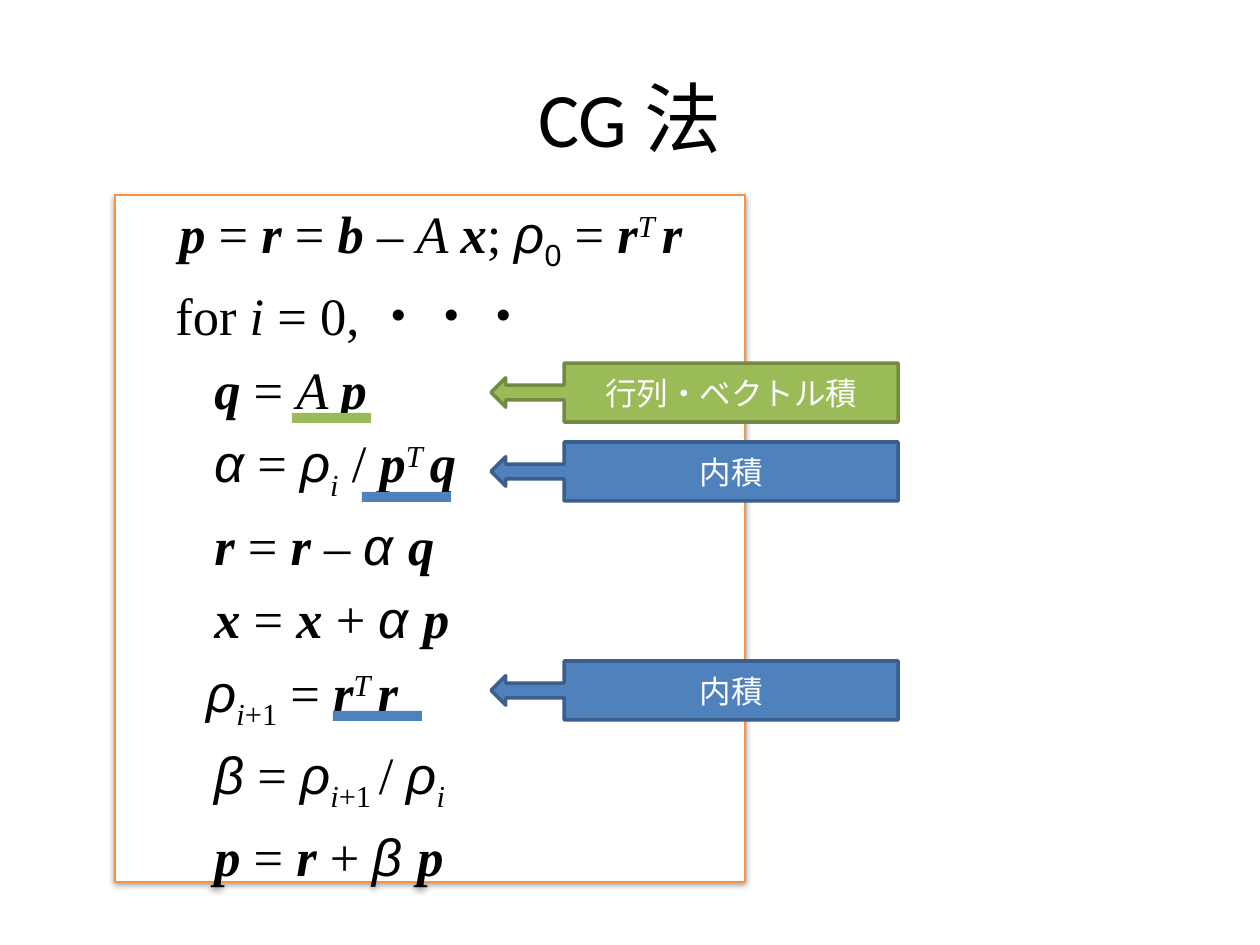
from lxml.etree import SubElement
from pptx import Presentation
from pptx.dml.color import RGBColor
from pptx.enum.shapes import MSO_SHAPE
from pptx.enum.text import MSO_ANCHOR, MSO_AUTO_SIZE, PP_ALIGN
from pptx.oxml.ns import qn
from pptx.util import Pt

PX = 914400 / 126
COLORS = {
    "text": "000000", "paper": "FFFFFF", "frame": "F69240",
    "green": "9BBB59", "green_edge": "738A42",
    "blue": "4F81BD", "blue_edge": "3A5F8C",
}

# style: font, bold, italic, baseline in percent
STYLES = {
    "plain": ("Times New Roman", False, False, 0),
    "vector": ("Times New Roman", True, True, 0),
    "matrix": ("Times New Roman", False, True, 0),
    "greek": ("Arial", False, True, 0),
    "zero": ("Arial", False, False, -25),
    "index": ("Times New Roman", False, True, -25),
    "offset": ("Times New Roman", False, False, -25),
    "power": ("Times New Roman", False, True, 30),
}

# indent in px, then the styled pieces of each line
ALGORITHM = [
    (52, [("p", "vector"), (" = ", "plain"), ("r", "vector"), (" = ", "plain"),
          ("b", "vector"), (" – ", "plain"), ("A ", "matrix"), ("x", "vector"),
          ("; ", "plain"), ("ρ", "greek"), ("0", "zero"), (" = ", "plain"),
          ("r", "vector"), ("T ", "power"), ("r", "vector")]),
    (48, [("for ", "plain"), ("i", "matrix"), (" = 0, ・・・", "plain")]),
    (87, [("q", "vector"), (" = ", "plain"), ("A ", "matrix"), ("p", "vector")]),
    (87, [("α", "greek"), (" = ", "plain"), ("ρ", "greek"), ("i", "index"),
          (" / ", "plain"), ("p", "vector"), ("T ", "power"), ("q", "vector")]),
    (87, [("r", "vector"), (" = ", "plain"), ("r", "vector"), (" – ", "plain"),
          ("α ", "greek"), ("q", "vector")]),
    (87, [("x", "vector"), (" = ", "plain"), ("x", "vector"), (" + ", "plain"),
          ("α ", "greek"), ("p", "vector")]),
    (79, [("ρ", "greek"), ("i", "index"), ("+1", "offset"), (" = ", "plain"),
          ("r", "vector"), ("T ", "power"), ("r", "vector")]),
    (87, [("β", "greek"), (" = ", "plain"), ("ρ", "greek"), ("i", "index"),
          ("+1 ", "offset"), ("/ ", "plain"), ("ρ", "greek"), ("i", "index")]),
    (87, [("p", "vector"), (" = ", "plain"), ("r", "vector"), (" + ", "plain"),
          ("β ", "greek"), ("p", "vector")]),
]

# callout top, label, colour, underline left and width
OPERATIONS = [
    (363, "行列・ベクトル積", "green", 292, 79),
    (442, "内積", "blue", 362, 89),
    (661, "内積", "blue", 333, 89),
]


def px(length):
    return round(length * PX)


def add_block(kind, left, top, width, height, fill, edge=None, weight=0):
    block = page.shapes.add_shape(kind, px(left), px(top), px(width), px(height))
    block.shadow.inherit = False
    block.fill.solid()
    block.fill.fore_color.rgb = RGBColor.from_string(COLORS[fill])
    if edge:
        block.line.color.rgb = RGBColor.from_string(COLORS[edge])
        block.line.width = Pt(weight)
    else:
        block.line.fill.background()
    return block


deck = Presentation()
deck.slide_width, deck.slide_height = px(1260), px(945)
page = deck.slides.add_slide(deck.slide_layouts[5])

# Title
title = page.shapes.title
title.left, title.top, title.width, title.height = px(63), px(38), px(1134), px(157)
title.text_frame.text = "CG 法"
title.text_frame.vertical_anchor = MSO_ANCHOR.MIDDLE
para = title.text_frame.paragraphs[0]
para.alignment = PP_ALIGN.CENTER
font = para.runs[0].font
font.name, font.size = "Calibri", Pt(44)
font.color.rgb = RGBColor.from_string(COLORS["text"])

# Algorithm frame with its soft shadow
box = add_block(MSO_SHAPE.RECTANGLE, 115, 195, 630, 687, "paper", "frame", 0.75)
effects = box._element.spPr.find(qn("a:effectLst"))
shadow = SubElement(effects, qn("a:outerShdw"), blurRad=str(Pt(3.1)),
                    dist=str(Pt(1.6)), dir="5400000", rotWithShape="0")
shade = SubElement(shadow, qn("a:srgbClr"), val=COLORS["text"])
SubElement(shade, qn("a:alpha"), val="38000")

# Algorithm lines
frame = box.text_frame
frame.word_wrap = True
frame.auto_size = MSO_AUTO_SIZE.SHAPE_TO_FIT_TEXT
frame.vertical_anchor = MSO_ANCHOR.TOP
for number, (indent, pieces) in enumerate(ALGORITHM):
    para = frame.add_paragraph() if number else frame.paragraphs[0]
    para.alignment = PP_ALIGN.LEFT
    properties = para._p.get_or_add_pPr()
    properties.set("marL", str(px(indent)))
    properties.set("indent", "0")
    before = SubElement(properties, qn("a:spcBef"))
    SubElement(before, qn("a:spcPct"), val="20000")
    for text, style in pieces:
        span = para.add_run()
        span.text = text
        font = span.font
        font.name, font.bold, font.italic, baseline = STYLES[style]
        font.size = Pt(30)
        font.color.rgb = RGBColor.from_string(COLORS["text"])
        if baseline:
            span._r.get_or_add_rPr().set("baseline", str(baseline * 1000))

# Callouts, each with the underline of the term it names
for top, label, color, bar_left, bar_width in OPERATIONS:
    callout = add_block(MSO_SHAPE.LEFT_ARROW_CALLOUT, 491, top, 407, 59,
                        color, color + "_edge", 2)
    callout.adjustments[3] = 0.82
    callout.text_frame.text = label
    callout.text_frame.vertical_anchor = MSO_ANCHOR.MIDDLE
    para = callout.text_frame.paragraphs[0]
    para.alignment = PP_ALIGN.CENTER
    font = para.runs[0].font
    font.name, font.size = "Calibri", Pt(18)
    font.color.rgb = RGBColor.from_string(COLORS["paper"])
    add_block(MSO_SHAPE.RECTANGLE, bar_left, top + 50, bar_width, 10, color)

deck.save("out.pptx")
